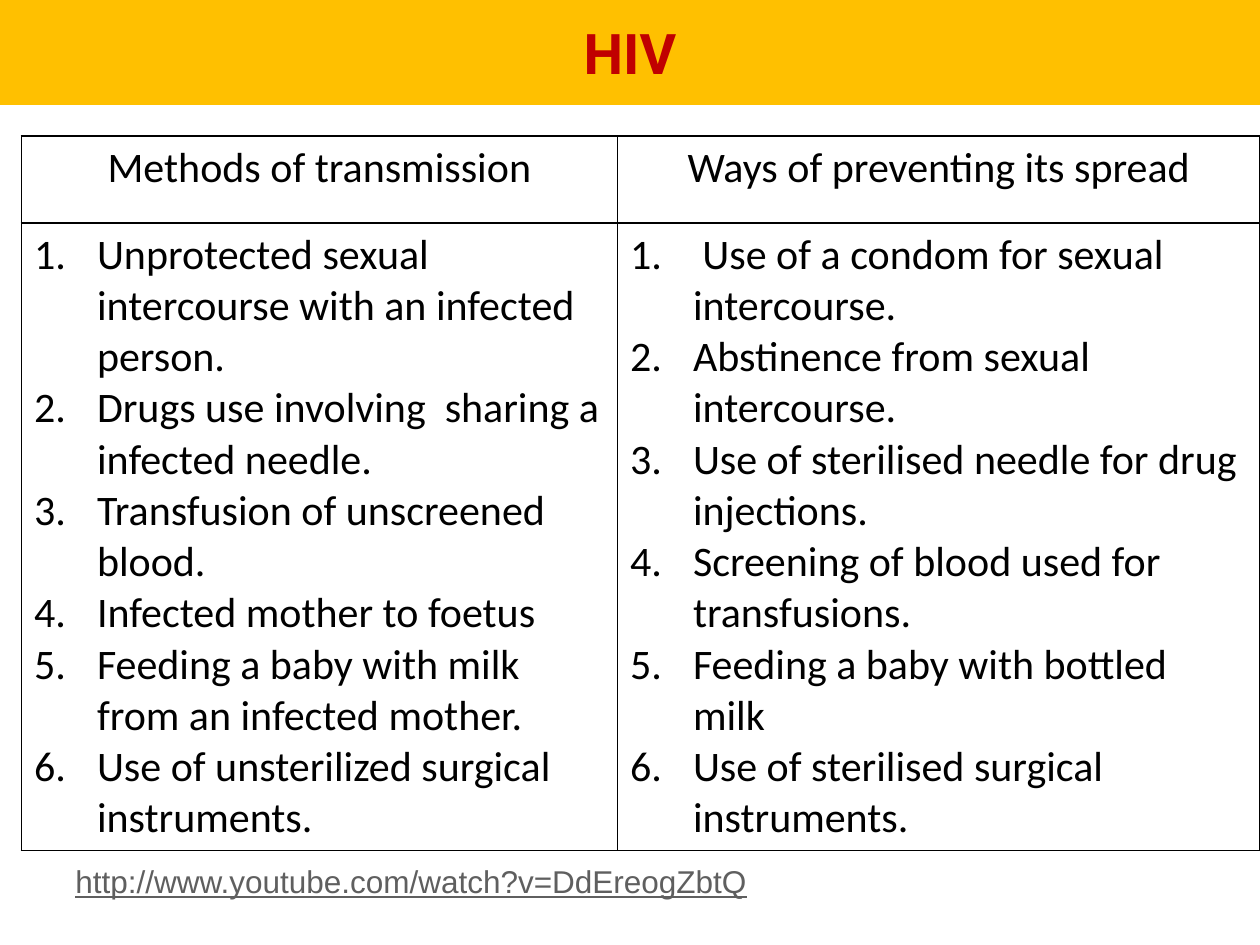
from lxml import etree
from pptx import Presentation
from pptx.dml.color import RGBColor
from pptx.enum.shapes import MSO_SHAPE
from pptx.enum.text import MSO_ANCHOR, PP_ALIGN
from pptx.oxml.ns import qn
from pptx.util import Pt

RECT = MSO_SHAPE.RECTANGLE
MIDDLE = MSO_ANCHOR.MIDDLE
LEFT, CENTER = PP_ALIGN.LEFT, PP_ALIGN.CENTER

THEME = {
    "band": RGBColor.from_string("FFC000"),
    "line": "000000",
    "title": {"name": "Roboto", "size": Pt(32), "bold": True, "color": "C00000"},
    "body": {"name": "Calibri", "size": Pt(24), "bold": False, "color": "000000"},
    "link": {"name": "Arial", "size": Pt(18), "underline": True, "color": "5F5F5F"},
}

COLUMNS = [
    (340.56, "Methods of transmission", [
        "Unprotected sexual intercourse with an infected person.",
        "Drugs use involving  sharing a infected needle.",
        "Transfusion of unscreened blood.",
        "Infected mother to foetus",
        "Feeding a baby with milk from an infected mother.",
        "Use of unsterilized surgical instruments.",
    ]),
    (367.2, "Ways of preventing its spread", [
        " Use of a condom for sexual intercourse.",
        "Abstinence from sexual intercourse.",
        "Use of sterilised needle for drug injections.",
        "Screening of blood used for transfusions.",
        "Feeding a baby with bottled milk",
        "Use of sterilised surgical instruments.",
    ]),
]
ROWS = [49.68, 352.8]


def write(frame, lines, style, align=LEFT, number=False):
    frame.text = "\n".join(lines)
    for para in frame.paragraphs:
        para.alignment = align
        if number:
            props = para._p.get_or_add_pPr()
            props.set("marL", str(Pt(36)))
            props.set("indent", str(-Pt(36)))
            etree.SubElement(props, qn("a:buFont"), typeface="+mj-lt")
            etree.SubElement(props, qn("a:buAutoNum"), type="arabicPeriod")
        font = para.runs[0].font
        for key, value in THEME[style].items():
            if key == "color":
                font.color.rgb = RGBColor.from_string(value)
            else:
                setattr(font, key, value)


def border(cell):
    cell.fill.background()
    props = cell._tc.get_or_add_tcPr()
    for spot, side in enumerate(("lnL", "lnR", "lnT", "lnB")):
        line = etree.Element(qn(f"a:{side}"), w=str(Pt(1)))
        fill = etree.SubElement(line, qn("a:solidFill"))
        etree.SubElement(fill, qn("a:srgbClr"), val=THEME["line"])
        props.insert(spot, line)


deck = Presentation()
deck.slide_width, deck.slide_height = Pt(720), Pt(540)
slide = deck.slides.add_slide(deck.slide_layouts[6])
shapes = slide.shapes

grid = shapes.add_table(
    len(ROWS), len(COLUMNS), Pt(12.24), Pt(77.76),
    Pt(sum(col[0] for col in COLUMNS)), Pt(sum(ROWS)),
).table
grid.first_row = grid.horz_banding = False
for row, height in zip(grid.rows, ROWS):
    row.height = Pt(height)
for index, (width, head, items) in enumerate(COLUMNS):
    grid.columns[index].width = Pt(width)
    top, body = grid.cell(0, index), grid.cell(1, index)
    write(top.text_frame, [head], "body", CENTER)
    write(body.text_frame, items, "body", number=True)
    border(top)
    border(body)

band = shapes.add_shape(RECT, 0, 0, deck.slide_width, Pt(60))
band.shadow.inherit = False
band.fill.solid()
band.fill.fore_color.rgb = THEME["band"]
band.line.fill.background()
band.text_frame.vertical_anchor = MIDDLE
write(band.text_frame, ["HIV"], "title", CENTER)

link = shapes.add_textbox(Pt(36), Pt(488.88), Pt(408.24), Pt(28.8))
link.text_frame.word_wrap = True
write(link.text_frame, ["http://www.youtube.com/watch?v=DdEreogZbtQ"], "link")

deck.save("out.pptx")
